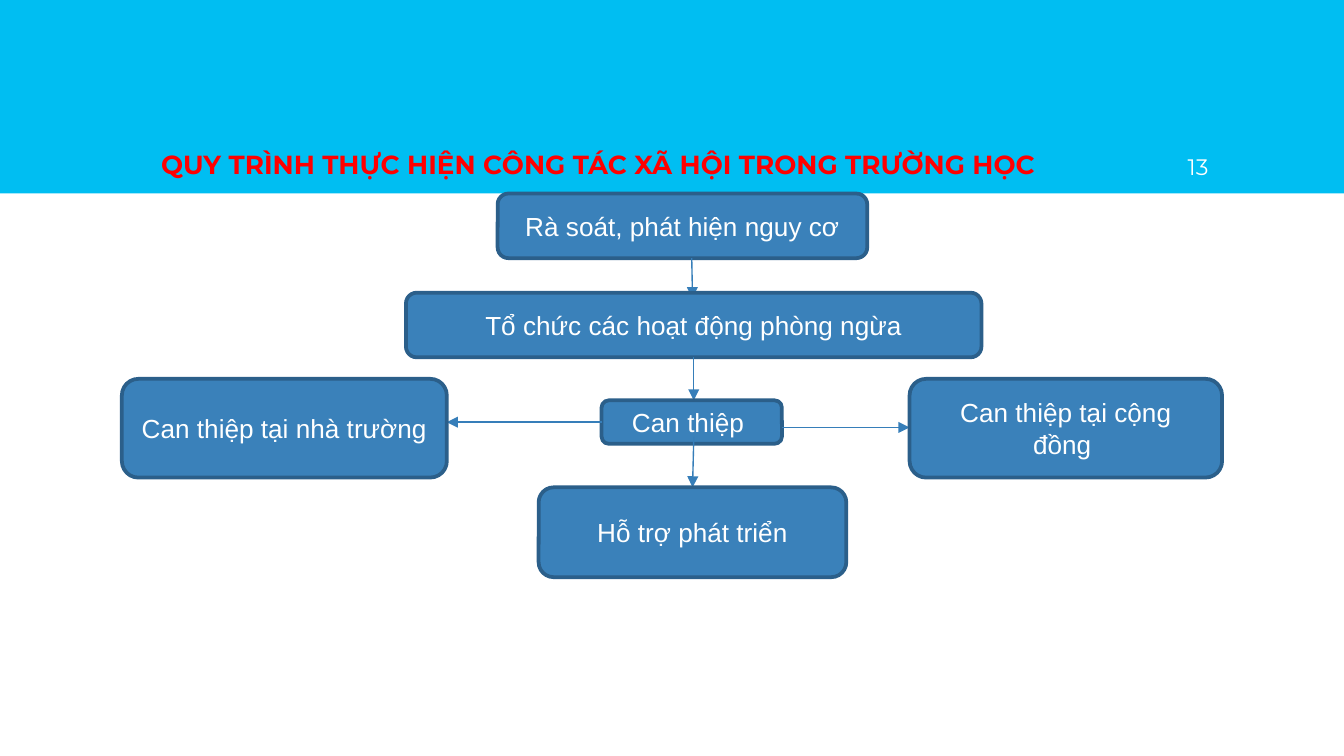
from dataclasses import dataclass

from lxml import etree
from pptx import Presentation
from pptx.dml.color import RGBColor
from pptx.enum import shapes, text
from pptx.oxml import ns
from pptx.util import Pt


@dataclass(frozen=True)
class Theme:
    band: str = "00BEF2"
    fill: str = "3A81BA"
    edge: str = "2B5F8A"
    arrow: str = "367EB9"
    white: str = "FFFFFF"
    title: str = "FF0000"
    head: str = "Montserrat"
    body: str = "Arial"
    size: float = 14
    small: float = 12
    thick: float = 2
    thin: float = 0.75


@dataclass(frozen=True)
class Box:
    label: str
    left: float
    top: float
    width: float
    height: float


@dataclass(frozen=True)
class Arrow:
    x1: float
    y1: float
    x2: float
    y2: float


T = Theme()
WIDTH, HEIGHT = 720, 405
BAND = 103.7

# Flow parts, from back to front
FLOW = (
    Box("Rà soát, phát hiện nguy cơ", 266.6, BAND, 198, 34.6),
    Arrow(370.6, 138.3, 371, 159.8),
    Box("Tổ chức các hoạt động phòng ngừa", 217.5, 156.8, 308.3, 34.6),
    Arrow(371.7, 191.4, 371.7, 214.5),
    Box("Can thiệp ", 322.3, 214.5, 96.6, 23.3),
    Arrow(418.9, 229, 487.3, 229),
    Arrow(322.3, 226.2, 239.4, 226.2),
    Box("Can thiệp tại nhà trường", 65.3, 203, 174.1, 52.9),
    Box("Can thiệp tại cộng đồng ", 487.3, 203, 167.4, 52.9),
    Arrow(371.7, 234, 371, 261.1),
    Box("Hỗ trợ phát triển", 288.6, 261.1, 164.8, 48.1),
)


def rgb(code: str) -> RGBColor:
    return RGBColor.from_string(code)


def write(frame, words: str, *, font: str = T.body, size: float = T.size,
          color: str = T.white, bold: bool = False,
          align=text.PP_ALIGN.CENTER, anchor=text.MSO_ANCHOR.MIDDLE,
          inset: float | None = None) -> None:
    frame.word_wrap = True
    frame.vertical_anchor = anchor
    if inset is not None:
        frame.margin_left = frame.margin_right = Pt(inset)
        frame.margin_top = frame.margin_bottom = Pt(inset)
    para = frame.paragraphs[0]
    para.alignment = align
    run = para.add_run()
    run.text = words
    run.font.name, run.font.size, run.font.bold = font, Pt(size), bold
    run.font.color.rgb = rgb(color)


def draw_box(slide, box: Box) -> None:
    shape = slide.shapes.add_shape(
        shapes.MSO_SHAPE.ROUNDED_RECTANGLE, Pt(box.left), Pt(box.top),
        Pt(box.width), Pt(box.height))
    shape.shadow.inherit = False
    shape.fill.solid()
    shape.fill.fore_color.rgb = rgb(T.fill)
    shape.line.color.rgb = rgb(T.edge)
    shape.line.width = Pt(T.thick)
    write(shape.text_frame, box.label)


def draw_arrow(slide, arrow: Arrow) -> None:
    line = slide.shapes.add_connector(
        shapes.MSO_CONNECTOR.STRAIGHT, Pt(arrow.x1), Pt(arrow.y1),
        Pt(arrow.x2), Pt(arrow.y2))
    line.line.color.rgb = rgb(T.arrow)
    line.line.width = Pt(T.thin)
    props = line.element.spPr
    etree.SubElement(props.find(ns.qn("a:ln")), ns.qn("a:tailEnd"),
                     type="triangle")
    etree.SubElement(props, ns.qn("a:effectLst"))


def draw_head(slide) -> None:
    # Band across the top
    band = slide.shapes.add_shape(
        shapes.MSO_SHAPE.RECTANGLE, 0, 0, Pt(WIDTH), Pt(BAND))
    band.shadow.inherit = False
    band.fill.solid()
    band.fill.fore_color.rgb = rgb(T.band)
    band.line.fill.background()

    # Title and page number sit on the band's lower edge
    top, high = Pt(51.1), Pt(52.6)
    base = dict(font=T.head, anchor=text.MSO_ANCHOR.BOTTOM, inset=7.2)
    title = slide.shapes.add_textbox(Pt(79.2), top, Pt(561.6), high)
    write(title.text_frame,
          "QUY TRÌNH THỰC HIỆN CÔNG TÁC XÃ HỘI TRONG TRƯỜNG HỌC",
          color=T.title, bold=True, align=text.PP_ALIGN.LEFT, **base)
    page = slide.shapes.add_textbox(Pt(611.3), top, Pt(43.2), high)
    write(page.text_frame, "13", size=T.small,
          align=text.PP_ALIGN.RIGHT, **base)


def main() -> None:
    deck = Presentation()
    deck.slide_width, deck.slide_height = Pt(WIDTH), Pt(HEIGHT)
    slide = deck.slides.add_slide(deck.slide_layouts[6])
    draw_head(slide)
    for part in FLOW:
        if isinstance(part, Box):
            draw_box(slide, part)
        else:
            draw_arrow(slide, part)
    deck.save("out.pptx")


if __name__ == "__main__":
    main()
